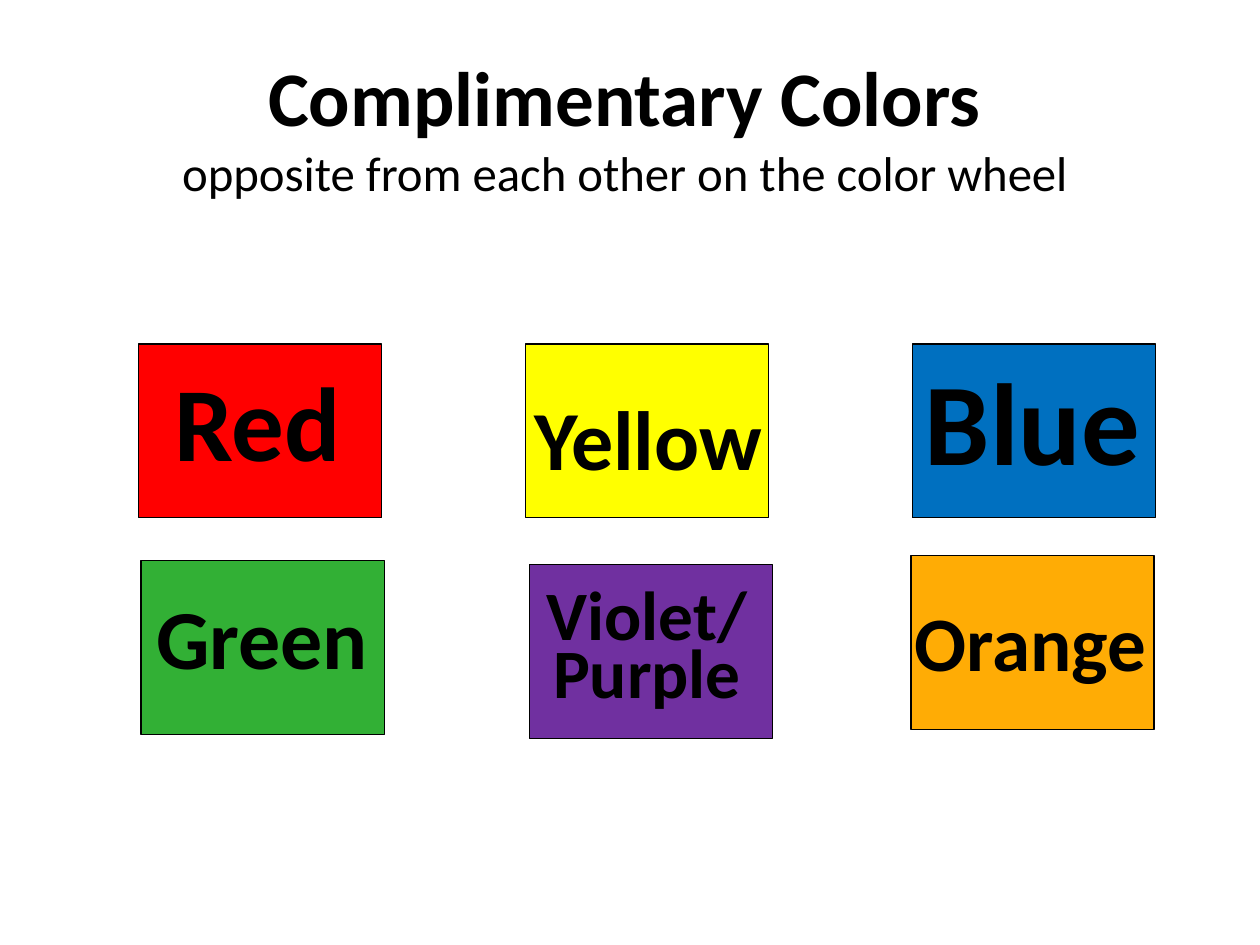
from pptx import Presentation
from pptx.dml.color import RGBColor as Rgb
from pptx.enum.shapes import MSO_SHAPE as Shape
from pptx.enum.text import MSO_ANCHOR as Anchor, MSO_AUTO_SIZE as Fit, PP_ALIGN as Align
from pptx.util import Inches, Pt

COLORS = {
    "text": "000000", "line": "000000",
    "red": "FF0000", "yellow": "FFFF00", "blue": "0070C0",
    "green": "32B035", "violet": "7030A0", "orange": "FFAC05",
}


class Deck:
    font = "Calibri"
    swatch = (1.93, 1.38)

    def __init__(self, slide):
        self.slide = slide

    def color(self, name):
        return Rgb.from_string(COLORS[name])

    def style(self, run, size, bold=True):
        font = run.font
        font.name, font.size, font.bold = self.font, Pt(size), bold
        font.color.rgb = self.color("text")

    def frame(self, shape, text):
        frame = shape.text_frame
        frame.text = text
        frame.word_wrap = True
        frame.auto_size = Fit.NONE
        frame.vertical_anchor = Anchor.MIDDLE
        para = frame.paragraphs[0]
        para.alignment = Align.CENTER
        return frame, para

    def title(self, head, sub, box):
        shape = self.slide.shapes.title
        shape.left, shape.top, shape.width, shape.height = map(Inches, box)
        _, para = self.frame(shape, f"{head}\v{sub}")
        self.style(para.runs[0], 44.1)
        self.style(para.runs[1], 27.9, bold=False)

    def block(self, name, left, top):
        box = map(Inches, (left, top, *self.swatch))
        shape = self.slide.shapes.add_shape(Shape.RECTANGLE, *box)
        shape.shadow.inherit = False
        shape.fill.solid()
        shape.fill.fore_color.rgb = self.color(name)
        shape.line.color.rgb = self.color("line")
        shape.line.width = Pt(0.75)

    def label(self, text, size, box, gap=0.9):
        shape = self.slide.shapes.add_textbox(*map(Inches, box))
        frame, para = self.frame(shape, text)
        frame.margin_left = frame.margin_right = Inches(0.05)
        para.line_spacing = gap
        self.style(para.runs[0], size)


def main():
    prs = Presentation()
    prs.slide_width, prs.slide_height = Inches(10), Inches(7.5)
    deck = Deck(prs.slides.add_slide(prs.slide_layouts[5]))

    # Heading
    deck.title("Complimentary Colors", "opposite from each other on the color wheel",
               (0.46, 0.28, 9, 1.43))

    # Primary colors: an even row
    for col, name in enumerate(("red", "yellow", "blue")):
        deck.block(name, 1.1 + col * 3.07, 2.73)
    deck.label("Red", 60, (1.08, 2.67, 1.93, 1.45))
    deck.label("Yellow", 48, (3.87, 2.67, 2.55, 1.7))
    deck.label("Blue", 66.6, (7.23, 2.67, 1.93, 1.45))

    # Their complements, below
    for name, left, top in (("orange", 7.23, 4.41), ("green", 1.12, 4.45),
                            ("violet", 4.2, 4.48)):
        deck.block(name, left, top)
    deck.label("Green", 48, (0.82, 4.37, 2.52, 1.45))
    deck.label("Orange", 44, (6.83, 4.41, 2.7, 1.45))
    deck.label("Violet/Purple", 39.6, (4.17, 4.45, 1.93, 1.45), gap=0.7)

    prs.save("out.pptx")


if __name__ == "__main__":
    main()
